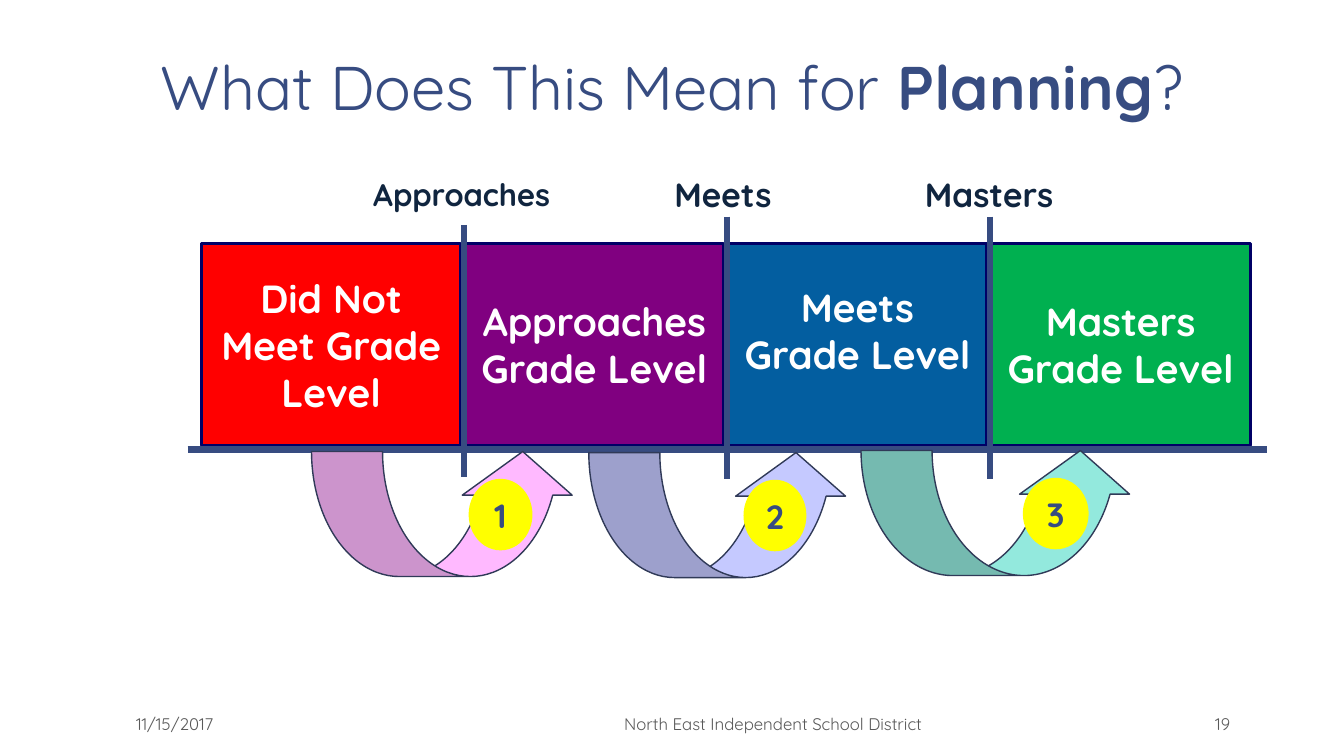
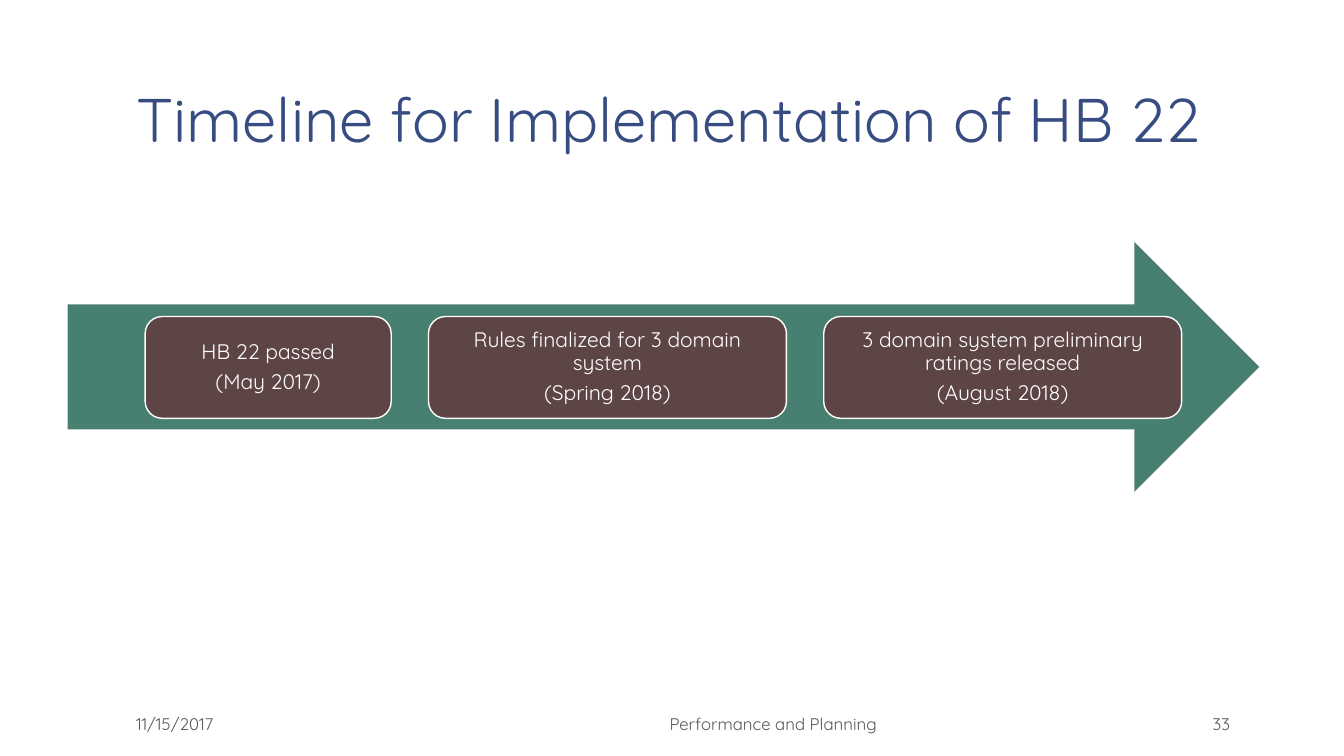
import pptx
import pptx.dml.color
import pptx.enum.shapes
import pptx.enum.text
import pptx.oxml.ns
import pptx.util
from lxml import etree

Inches = pptx.util.Inches
Pt = pptx.util.Pt
RGBColor = pptx.dml.color.RGBColor
Shape = pptx.enum.shapes.MSO_SHAPE
Align = pptx.enum.text.PP_ALIGN
Anchor = pptx.enum.text.MSO_ANCHOR

FONT = "Quicksand"
NAVY = RGBColor(0x37, 0x4C, 0x81)
LABEL_NAVY = RGBColor(0x10, 0x25, 0x3F)
BOX_EDGE = RGBColor(0x00, 0x00, 0x66)
ARROW_EDGE = RGBColor(0x30, 0x3A, 0x58)
GRAY = RGBColor(0x59, 0x59, 0x59)
WHITE = RGBColor(0xFF, 0xFF, 0xFF)
RED = RGBColor(0xFF, 0x00, 0x00)
PURPLE = RGBColor(0x80, 0x00, 0x80)
BLUE = RGBColor(0x03, 0x5E, 0xA0)
GREEN = RGBColor(0x00, 0xB0, 0x50)
YELLOW = RGBColor(0xFF, 0xFF, 0x00)
PINK = RGBColor(0xFF, 0xB9, 0xFF)
LAVENDER = RGBColor(0xC5, 0xC9, 0xFF)
AQUA = RGBColor(0x93, 0xE9, 0xDD)
TEAL = RGBColor(0x47, 0x7F, 0x71)
BROWN = RGBColor(0x5E, 0x45, 0x45)

STANDARD_INSETS = (0.1, 0.05, 0.1, 0.05)
PLACEHOLDER_INSETS = (0.13, 0.07, 0.13, 0.07)


def set_values(target, values):
    for name, value in values.items():
        setattr(target, name, value)


def write_text(shape, paragraphs, size, color, bold=False, align=Align.CENTER,
               anchor=Anchor.MIDDLE, insets=STANDARD_INSETS, spacing=None):
    """Fill a shape with paragraphs, each a list of (text, bold) runs or a string."""
    frame = shape.text_frame
    left, top, right, bottom = map(Inches, insets)
    set_values(frame, {"word_wrap": True, "vertical_anchor": anchor,
                       "margin_left": left, "margin_top": top,
                       "margin_right": right, "margin_bottom": bottom})
    for index, content in enumerate(paragraphs):
        paragraph = frame.add_paragraph() if index else frame.paragraphs[0]
        set_values(paragraph, {"alignment": align, **(spacing or {})})
        runs = [(content, bold)] if isinstance(content, str) else content
        for text, run_bold in runs:
            run = paragraph.add_run()
            run.text = text
            set_values(run.font, {"name": FONT, "size": Pt(size), "bold": run_bold})
            run.font.color.rgb = color


def add_text(slide, bounds, paragraphs, size, color, **options):
    box = slide.shapes.add_textbox(*map(Inches, bounds))
    write_text(box, paragraphs, size, color, **options)


def add_filled_shape(slide, kind, bounds, fill, edge=None, edge_width=1):
    shape = slide.shapes.add_shape(kind, *map(Inches, bounds))
    shape.shadow.inherit = False
    shape.fill.solid()
    shape.fill.fore_color.rgb = fill
    if edge is None:
        shape.line.fill.background()
    else:
        shape.line.color.rgb = edge
        shape.line.width = Pt(edge_width)
    return shape


def add_line(slide, *ends):
    line = slide.shapes.add_connector(
        pptx.enum.shapes.MSO_CONNECTOR.STRAIGHT, *map(Inches, ends))
    line.line.color.rgb = NAVY
    line.line.width = Pt(4.5)
    etree.SubElement(line._element.spPr, pptx.oxml.ns.qn("a:effectLst"))


def add_base_slide(presentation, title, title_top, title_align, footer, number):
    """Add a slide with its title, date, footer and page number."""
    slide = presentation.slides.add_slide(presentation.slide_layouts[6])
    add_text(slide, (1.11 if title_align == Align.CENTER else 1.22, title_top, 11.11, 1.53),
             [title], 44, NAVY, align=title_align, anchor=Anchor.BOTTOM,
             insets=PLACEHOLDER_INSETS, spacing={"line_spacing": 0.85})
    for left, width, text, align in (
            (1.22, 3, "11/15/2017", Align.LEFT),
            (4.27, 6.8, footer, Align.CENTER),
            (11.12, 1.21, number, Align.RIGHT)):
        add_text(slide, (left, 7, width, 0.35), [text], 12, GRAY, align=align,
                 anchor=Anchor.BOTTOM, insets=PLACEHOLDER_INSETS)
    return slide


def add_level_boxes(slide):
    first_left, pitch = 2, 2.61
    raised = (0.1, 0.05, 0.1, 0.33)
    levels = (
        (["Did Not Meet Grade Level"], RED, STANDARD_INSETS),
        (["Approaches Grade Level"], PURPLE, STANDARD_INSETS),
        (["Meets", "Grade Level"], BLUE, raised),
        (["Masters", "Grade Level"], GREEN, STANDARD_INSETS),
    )
    for index, (lines, fill, insets) in enumerate(levels):
        box = add_filled_shape(slide, Shape.RECTANGLE,
                               (first_left + index * pitch, 2.42, 2.57, 2),
                               fill, BOX_EDGE, 2.25)
        write_text(box, lines, 28, WHITE, bold=True, insets=insets)

    add_line(slide, 1.86, 4.46, 12.57, 4.46)
    thresholds = (
        ("Approaches", 4.58, 22.2, 2.23, 4.73),
        ("Meets", 7.17, 24, 2.15, 4.75),
        ("Masters", 9.81, 24, 2.15, 4.75),
    )
    for index, (label, center, size, top, bottom) in enumerate(thresholds, start=1):
        divider = first_left + index * pitch - 0.01
        add_line(slide, divider, top, divider, bottom)
        add_text(slide, (center - 1.07, 1.63, 2.14, 0.6), [label], size,
                 LABEL_NAVY, bold=True)


def add_step_arrow(slide, number, left, top, width, fill):
    """Add a curved arrow with its numbered badge."""
    arrow = add_filled_shape(slide, Shape.CURVED_UP_ARROW, (left, top, width, 1.24),
                             fill, ARROW_EDGE)
    for index, value in enumerate((0.568, 0.879, 0.349)):
        arrow.adjustments[index] = value
    badge = add_filled_shape(slide, Shape.OVAL,
                             (left + 0.59 * width, top + 0.27, 0.24 * width, 0.71), YELLOW)
    write_text(badge, [number], 24, NAVY, bold=True, insets=(0, 0, 0, 0))


def build_planning(presentation):
    title = [("What Does This Mean for ", False), ("Planning", True), ("?", False)]
    slide = add_base_slide(presentation, title, -0.24, Align.CENTER,
                           "North East Independent School District", "19")
    add_level_boxes(slide)
    for step in (("3", 8.54, 4.47, 2.72, AQUA),
                 ("2", 5.84, 4.49, 2.6, LAVENDER),
                 ("1", 3.09, 4.48, 2.64, PINK)):
        add_step_arrow(slide, *step)


def build_timeline(presentation):
    slide = add_base_slide(presentation, "Timeline for Implementation of HB 22", 0.08,
                           Align.LEFT, "Performance and Planning", "33")
    add_filled_shape(slide, Shape.RIGHT_ARROW, (0.67, 2.4, 11.82, 2.48), TEAL)
    left, gap = 1.44, 0.37
    for width, event, date in (
            (2.44, "HB 22 passed", "(May 2017)"),
            (3.55, "Rules finalized for 3 domain system", "(Spring 2018)"),
            (3.55, "3 domain system preliminary ratings released", "(August 2018)")):
        milestone = add_filled_shape(slide, Shape.ROUNDED_RECTANGLE,
                                     (left, 3.14, width, 1.01), BROWN, WHITE)
        write_text(milestone, [event, date], 15, WHITE, insets=(0.06,) * 4,
                   spacing={"line_spacing": 0.9, "space_after": Pt(5.25)})
        left += width + gap


def main():
    presentation = pptx.Presentation()
    set_values(presentation, {"slide_width": Inches(13.33), "slide_height": Inches(7.5)})
    build_planning(presentation)
    build_timeline(presentation)
    presentation.save("out.pptx")


if __name__ == "__main__":
    main()
